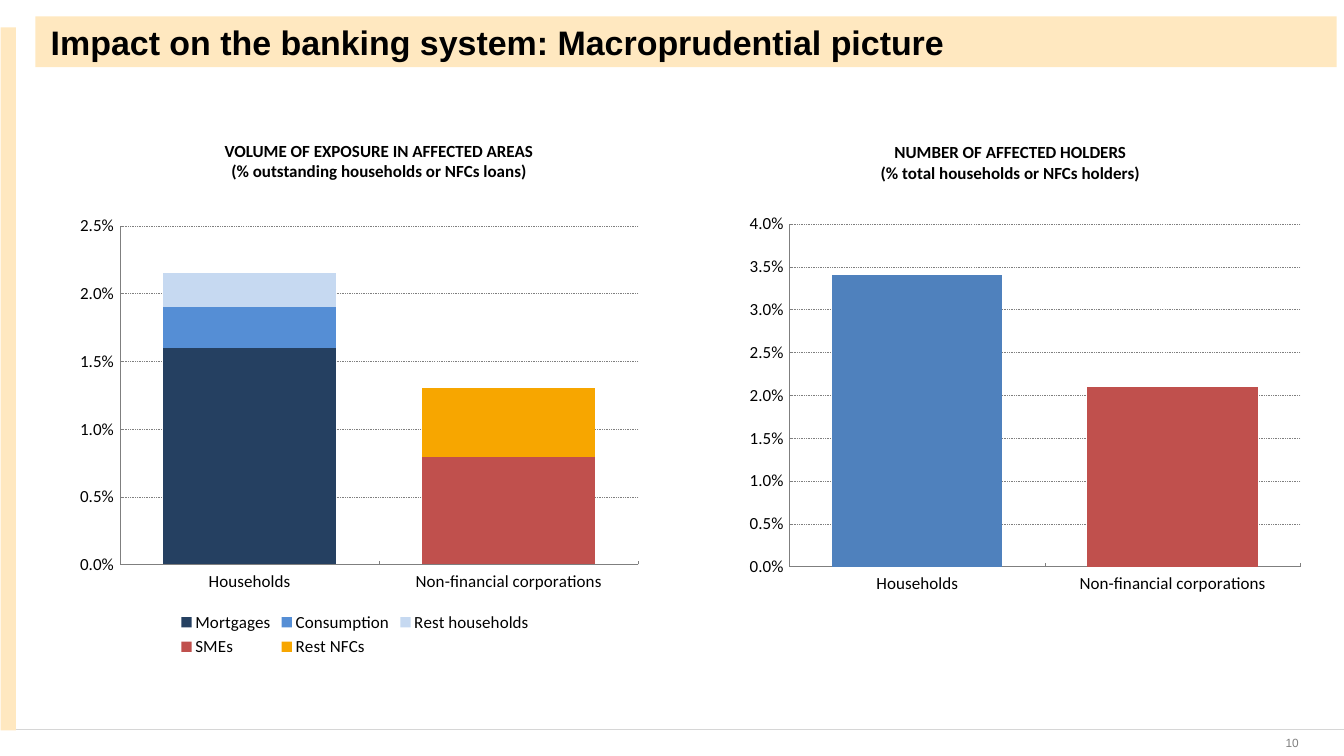
from dataclasses import dataclass

from pptx import Presentation
from pptx import util as u
from pptx.chart.data import CategoryChartData
from pptx.dml.color import RGBColor
from pptx.enum import chart as ch, dml, shapes, text
from pptx.oxml import parse_xml
from pptx.oxml.ns import nsdecls, qn

SCALE = 9144
HUES = {
    "black": "000000", "grey": "808080", "rule": "D6D6D6", "cream": "FFE8C0",
    "axis": "7F7F7F", "navy": "254061", "blue": "558ED5", "pale": "C6D9F1",
    "red": "C0504D", "gold": "F7A600", "steel": "4F81BD",
}
GROUPS = ("Households", "Non-financial corporations")
Box = tuple[int, int, int, int]


@dataclass
class Label:
    box: Box
    lines: tuple[str, ...]
    size: int
    font: str
    hue: str
    bold: bool
    align: text.PP_ALIGN


@dataclass
class Stack:
    name: str
    vals: tuple[float | None, float | None]
    hue: str


@dataclass
class Graph:
    box: Box
    plot: tuple[float, float, float, float]
    top: float
    key: bool
    stacks: tuple[Stack, ...]


LABELS = (
    Label((2049, 1198, 86, 34), ("10",), 14, "Arial", "grey", False, text.PP_ALIGN.RIGHT),
    Label((299, 225, 642, 77),
          ("VOLUME OF EXPOSURE IN AFFECTED AREAS", "(% outstanding households or NFCs loans)"),
          20, "Calibri", "black", True, text.PP_ALIGN.CENTER),
    Label((1349, 227, 608, 77),
          ("NUMBER OF AFFECTED HOLDERS", "(% total households or NFCs holders)"),
          20, "Calibri", "black", True, text.PP_ALIGN.CENTER),
)
GRAPHS = (
    Graph((88, 332, 986, 749), (0.11, 0.05, 0.86, 0.74), 0.025, True, (
        Stack("Mortgages", (0.016, None), "navy"),
        Stack("Consumption", (0.003, None), "blue"),
        Stack("Rest households", (0.0025, None), "pale"),
        Stack("SMEs", (None, 0.0079), "red"),
        Stack("Rest NFCs", (None, 0.0051), "gold"),
    )),
    Graph((1174, 336, 983, 758), (0.12, 0.04, 0.85, 0.74), 0.04, False, (
        Stack("Series 1", (0.034, None), "steel"),
        Stack("Series 2", (None, 0.021), "red"),
    )),
)


def px(n: int) -> u.Emu:
    return u.Emu(n * SCALE)


def place(box: Box) -> list[u.Emu]:
    return [px(n) for n in box]


def tint(name: str) -> RGBColor:
    return RGBColor.from_string(HUES[name])


def style(font, size: int, face: str, hue: str, bold: bool = False) -> None:
    font.size, font.name, font.bold = u.Pt(size), face, bold
    font.color.rgb = tint(hue)


def add_band(slide, box: Box):
    band = slide.shapes.add_shape(shapes.MSO_SHAPE.RECTANGLE, *place(box))
    band.shadow.inherit = False
    band.fill.solid()
    band.fill.fore_color.rgb = tint("cream")
    band.line.fill.background()
    return band


def add_rule(slide) -> None:
    rule = slide.shapes.add_connector(
        shapes.MSO_CONNECTOR.STRAIGHT, *place((26, 1194, 2199, 1194)))
    rule.line.color.rgb = tint("rule")
    rule.line.width = u.Pt(0.82)
    rule._element.spPr.append(parse_xml(f"<a:effectLst {nsdecls('a')}/>"))


def add_title(slide) -> None:
    frame = add_band(slide, (58, 27, 2129, 83)).text_frame
    frame.margin_left = px(25)
    frame.vertical_anchor = text.MSO_ANCHOR.MIDDLE
    para = frame.paragraphs[0]
    para.text = "Impact on the banking system: Macroprudential picture"
    para.alignment = text.PP_ALIGN.LEFT
    style(para.font, 40, "Arial", "black", True)


def add_label(slide, label: Label) -> None:
    frame = slide.shapes.add_textbox(*place(label.box)).text_frame
    frame.word_wrap = True
    frame.text = "\n".join(label.lines)
    for para in frame.paragraphs:
        para.alignment = label.align
        style(para.font, label.size, label.font, label.hue, label.bold)


def set_line(line) -> None:
    line.color.rgb = tint("axis")
    line.width = u.Pt(0.4)


def set_plot(chart, plot: tuple[float, ...]) -> None:
    area = chart.element.find(".//" + qn("c:plotArea"))
    for old in area.findall(qn("c:layout")):
        area.remove(old)
    modes = "".join(f'<c:{k}Mode val="edge"/>' for k in "xy")
    sizes = "".join(f'<c:{k} val="{v}"/>' for k, v in zip("xywh", plot))
    area.insert(0, parse_xml(
        f'<c:layout {nsdecls("c")}><c:manualLayout><c:layoutTarget val="inner"/>'
        f"{modes}{sizes}</c:manualLayout></c:layout>"))


def add_graph(slide, graph: Graph) -> None:
    data = CategoryChartData(number_format="0.0%")
    data.categories = GROUPS
    for stack in graph.stacks:
        data.add_series(stack.name, stack.vals)
    chart = slide.shapes.add_chart(
        ch.XL_CHART_TYPE.COLUMN_STACKED, *place(graph.box), data).chart
    chart.has_title = False
    style(chart.font, 20, "Calibri", "black")
    chart.has_legend = graph.key
    if graph.key:
        chart.legend.position = ch.XL_LEGEND_POSITION.BOTTOM
        chart.legend.include_in_layout = False
        style(chart.legend.font, 20, "Calibri", "black")
    bars = chart.plots[0]
    bars.gap_width, bars.overlap, bars.vary_by_categories = 50, 100, False
    for row, stack in zip(bars.series, graph.stacks):
        row.format.fill.solid()
        row.format.fill.fore_color.rgb = tint(stack.hue)
    for axis in (chart.category_axis, chart.value_axis):
        axis.tick_label_position = ch.XL_TICK_LABEL_POSITION.LOW
        axis.major_tick_mark = ch.XL_TICK_MARK.INSIDE
        axis.minor_tick_mark = ch.XL_TICK_MARK.NONE
        style(axis.tick_labels.font, 20, "Calibri", "black")
        set_line(axis.format.line)
    axis = chart.value_axis
    axis.minimum_scale, axis.maximum_scale, axis.major_unit = 0, graph.top, 0.005
    axis.tick_labels.number_format = "0.0%"
    axis.tick_labels.number_format_is_linked = False
    axis.has_major_gridlines = True
    grid = axis.major_gridlines.format.line
    set_line(grid)
    grid.dash_style = dml.MSO_LINE.DASH
    set_plot(chart, graph.plot)


def main() -> None:
    deck = Presentation()
    deck.slide_width, deck.slide_height = px(2199), px(1237)
    slide = deck.slides.add_slide(deck.slide_layouts[6])
    add_rule(slide)
    add_band(slide, (1, 45, 25, 1150))
    add_title(slide)
    for label in LABELS:
        add_label(slide, label)
    for graph in GRAPHS:
        add_graph(slide, graph)
    deck.save("out.pptx")


if __name__ == "__main__":
    main()
